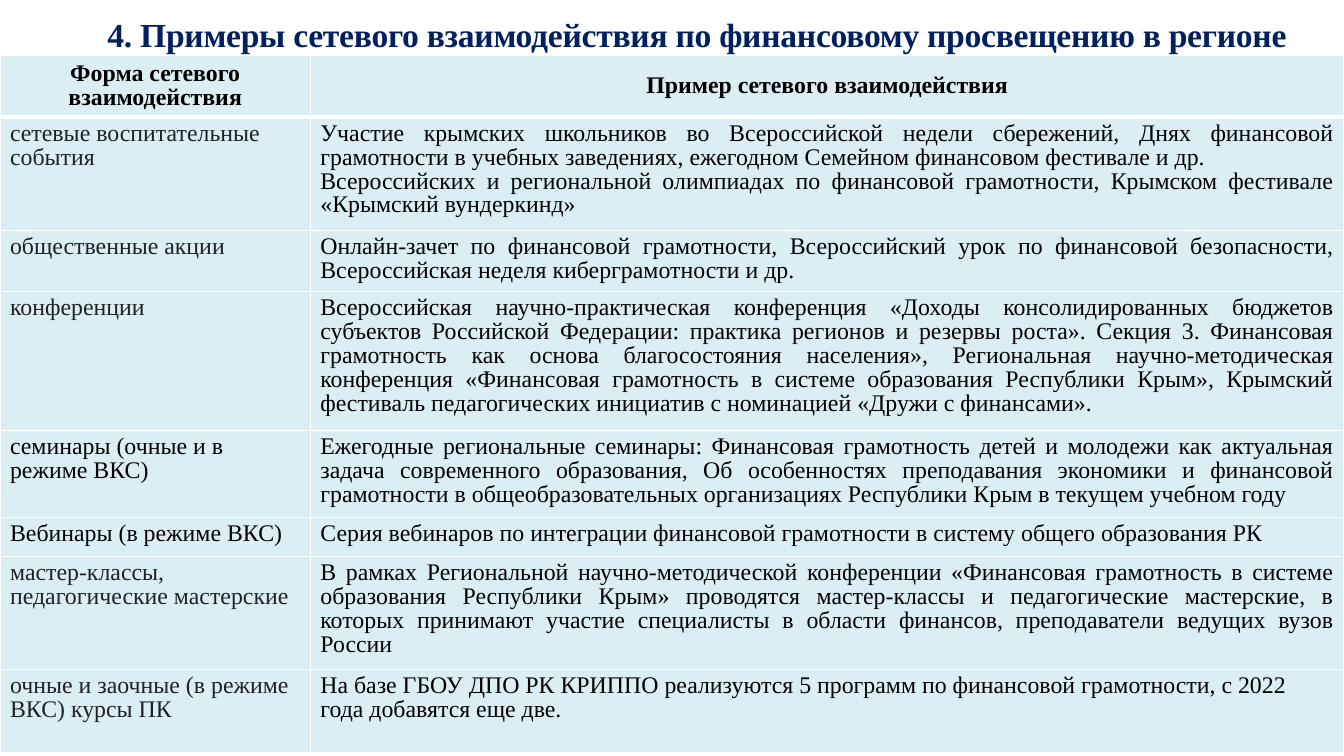
import pptx
import pptx.util
import pptx.dml.color
import pptx.enum.text
import pptx.oxml.ns
from lxml import etree

Cm = pptx.util.Cm
Pt = pptx.util.Pt
Align = pptx.enum.text.PP_ALIGN
Anchor = pptx.enum.text.MSO_ANCHOR
RGBColor = pptx.dml.color.RGBColor

NAVY = RGBColor(0x00, 0x20, 0x60)
BLACK = RGBColor(0x00, 0x00, 0x00)
GREY = RGBColor(0x20, 0x21, 0x24)
PALE = RGBColor(0xDB, 0xEE, 0xF4)
WHITE = RGBColor(0xFF, 0xFF, 0xFF)
FONT = "Times New Roman"

WIDTH = Cm(33.87)
COLS = (7.82, 26.05)
TITLE = "4. Примеры сетевого взаимодействия по финансовому просвещению в регионе"
HEADS = ("Форма сетевого взаимодействия", "Пример сетевого взаимодействия")
ROWS = (
    (2.85, GREY, Align.JUSTIFY, "сетевые воспитательные события",
     "Участие крымских школьников во Всероссийской недели сбережений, Днях "
     "финансовой грамотности в учебных заведениях, ежегодном Семейном "
     "финансовом фестивале и др.\n"
     "Всероссийских и региональной олимпиадах по финансовой грамотности, "
     "Крымском фестивале «Крымский вундеркинд»"),
    (1.55, GREY, Align.JUSTIFY, "общественные акции",
     "Онлайн-зачет по финансовой грамотности, Всероссийский урок по финансовой "
     "безопасности, Всероссийская неделя киберграмотности и др."),
    (3.48, GREY, Align.JUSTIFY, "конференции",
     "Всероссийская научно-практическая конференция «Доходы консолидированных "
     "бюджетов субъектов Российской Федерации: практика регионов и резервы "
     "роста». Секция 3. Финансовая грамотность как основа благосостояния "
     "населения», Региональная научно-методическая конференция «Финансовая "
     "грамотность в системе образования Республики Крым», Крымский фестиваль "
     "педагогических инициатив с номинацией «Дружи с финансами»."),
    (2.2, BLACK, Align.JUSTIFY, "семинары (очные и в режиме ВКС)",
     "Ежегодные региональные семинары: Финансовая грамотность детей и молодежи "
     "как актуальная задача современного образования, Об особенностях "
     "преподавания экономики и финансовой грамотности в общеобразовательных "
     "организациях Республики Крым в текущем учебном году"),
    (0.98, BLACK, Align.JUSTIFY, "Вебинары (в режиме ВКС)",
     "Серия вебинаров по интеграции финансовой грамотности в систему общего "
     "образования РК"),
    (2.84, GREY, Align.JUSTIFY, "мастер-классы, педагогические мастерские",
     "В рамках Региональной научно-методической конференции «Финансовая "
     "грамотность в системе образования Республики Крым» проводятся "
     "мастер-классы и педагогические мастерские, в которых принимают участие "
     "специалисты в области финансов, преподаватели ведущих вузов России"),
    (2.09, GREY, Align.LEFT, "очные и заочные (в режиме ВКС) курсы ПК",
     "На базе ГБОУ ДПО РК КРИППО реализуются 5 программ по финансовой "
     "грамотности, с 2022 года добавятся еще две."),
)


def write(frame, text, size=17, color=BLACK, bold=False, align=Align.LEFT,
          line=0.9, after=0, indent=0, track=0):
    for i, part in enumerate(text.split("\n")):
        para = frame.add_paragraph() if i else frame.paragraphs[0]
        para.alignment = align
        para.line_spacing = line
        para.space_after = Pt(after)
        if indent:
            para._p.get_or_add_pPr().set("indent", str(Cm(indent)))
        run = para.add_run()
        run.text = part
        font = run.font
        font.name, font.size, font.bold = FONT, Pt(size), bold
        font.color.rgb = color
        if track:
            font._element.set("spc", str(track))


def edge(cell, below):
    props = cell._tc.get_or_add_tcPr()
    qn = pptx.oxml.ns.qn
    for i, (side, width) in enumerate(zip("LRTB", (1, 1, 1, below))):
        line = etree.Element(qn(f"a:ln{side}"), w=str(Pt(width)))
        fill = etree.SubElement(line, qn("a:solidFill"))
        etree.SubElement(fill, qn("a:srgbClr"), val=str(WHITE))
        props.insert(i, line)


def put(cell, text, below=1, anchor=Anchor.TOP, **style):
    cell.fill.solid()
    cell.fill.fore_color.rgb = PALE
    cell.vertical_anchor = anchor
    edge(cell, below)
    write(cell.text_frame, text, **style)


def add_title(slide):
    box = slide.shapes.add_textbox(0, Cm(0.08), WIDTH, Cm(1.35))
    frame = box.text_frame
    frame.word_wrap = True
    frame.auto_size = pptx.enum.text.MSO_AUTO_SIZE.SHAPE_TO_FIT_TEXT
    write(frame, TITLE, size=24, color=NAVY, bold=True, align=Align.CENTER,
          line=1.15, after=10, indent=1.25, track=-20)


def add_grid(slide):
    tall = (1.55, *(row[0] for row in ROWS))
    shape = slide.shapes.add_table(len(tall), len(COLS), 0, Cm(1.4),
                                   WIDTH, Cm(sum(tall)))
    table = shape.table
    table.first_row = table.horz_banding = False
    for col, width in zip(table.columns, COLS):
        col.width = Cm(width)
    for row, height in zip(table.rows, tall):
        row.height = Cm(height)
    for i, head in enumerate(HEADS):
        put(table.cell(0, i), head, below=3, anchor=Anchor.MIDDLE,
            bold=True, align=Align.CENTER)
    for i, (_, color, align, form, sample) in enumerate(ROWS, 1):
        put(table.cell(i, 0), form, color=color)
        put(table.cell(i, 1), sample, align=align)


def main():
    deck = pptx.Presentation()
    deck.slide_width, deck.slide_height = WIDTH, Cm(19.05)
    slide = deck.slides.add_slide(deck.slide_layouts[6])
    add_title(slide)
    add_grid(slide)
    deck.save("out.pptx")


if __name__ == "__main__":
    main()
